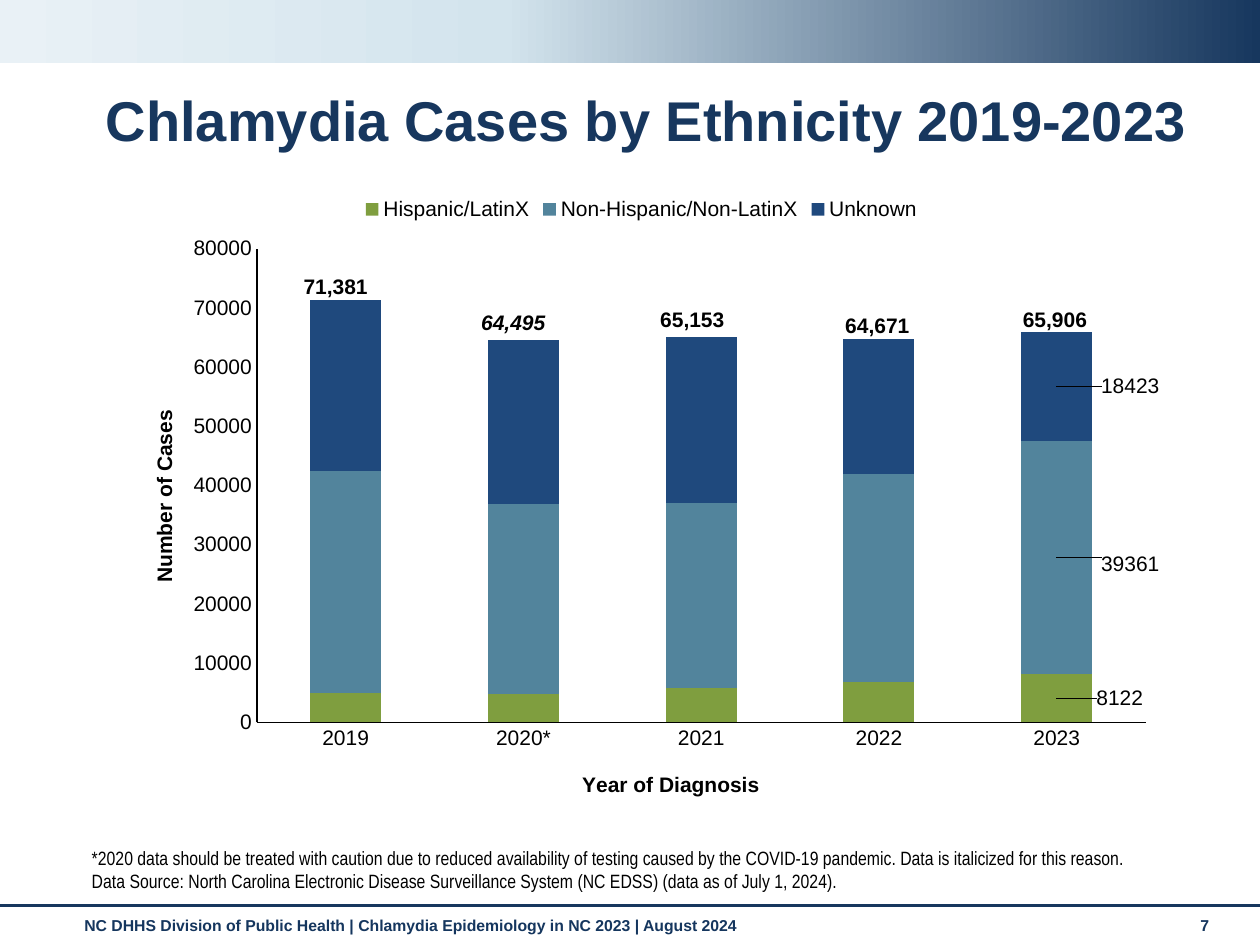
from copy import deepcopy
from typing import NamedTuple

from lxml.etree import SubElement
from pptx import Presentation
from pptx.chart.data import CategoryChartData
from pptx.dml.color import RGBColor
from pptx.enum.chart import XL_CHART_TYPE, XL_LABEL_POSITION, XL_LEGEND_POSITION, XL_TICK_MARK
from pptx.enum.shapes import MSO_CONNECTOR, MSO_SHAPE
from pptx.enum.text import MSO_ANCHOR, PP_ALIGN
from pptx.oxml import parse_xml
from pptx.oxml.ns import nsdecls, qn
from pptx.util import Cm, Pt

NAVY = RGBColor(0x17, 0x37, 0x5E)
FOOTER_NAVY = RGBColor(0x15, 0x36, 0x5E)
SKY = RGBColor(0xD3, 0xE4, 0xED)
PALE = RGBColor(0xE9, 0xF1, 0xF6)
GREEN = RGBColor(0x7F, 0x9E, 0x3F)
TEAL = RGBColor(0x52, 0x84, 0x9C)
BLUE = RGBColor(0x1F, 0x49, 0x7D)
BLACK = RGBColor(0, 0, 0)


class Box(NamedTuple):
    """Left, top, width and height in centimetres."""
    left: float
    top: float
    width: float
    height: float

    def lengths(self):
        return [Cm(value) for value in self]


class Ethnicity(NamedTuple):
    name: str
    cases: tuple
    color: RGBColor
    label_shift: tuple  # fractions of the chart size


class Total(NamedTuple):
    left: float
    top: float
    italic: bool = False


YEARS = ("2019", "2020*", "2021", "2022", "2023")
ETHNICITIES = (
    Ethnicity("Hispanic/LatinX", (5034, 4757, 5715, 6831, 8122), GREEN, (0.06, 0)),
    Ethnicity("Non-Hispanic/Non-LatinX", (37458, 32034, 31377, 35103, 39361), TEAL, (0.07, 0.01)),
    Ethnicity("Unknown", (28889, 27704, 28061, 22737, 18423), BLUE, (0.07, 0)),
)
TOTALS = (
    Total(5.87, 5.38),
    Total(9.45, 6.12, italic=True),
    Total(13.06, 6.05),
    Total(16.79, 6.17),
    Total(20.37, 6.05),
)
NOTES = (
    "*2020 data should be treated with caution due to reduced availability of testing "
    "caused by the COVID-19 pandemic. Data is italicized for this reason.\n"
    "Data Source: North Carolina Electronic Disease Surveillance System (NC EDSS) "
    "(data as of July 1, 2024)."
)


def format_font(font, size=12, color=BLACK, bold=False, italic=False, name="Arial"):
    font.name, font.size = name, Pt(size)
    font.bold, font.italic = bold, italic
    font.color.rgb = color


def write(frame, text: str, **style):
    frame.text = text
    for paragraph in frame.paragraphs:
        for run in paragraph.runs:
            format_font(run.font, **style)


def add_text(slide, box: Box, text: str, wrap=True, anchor=MSO_ANCHOR.TOP, **style):
    frame = slide.shapes.add_textbox(*box.lengths()).text_frame
    frame.word_wrap = wrap
    frame.vertical_anchor = anchor
    write(frame, text, **style)


def add_banner(slide):
    banner = slide.shapes.add_shape(MSO_SHAPE.RECTANGLE, *Box(0, 0, 25.4, 1.27).lengths())
    banner.shadow.inherit = False
    banner.line.fill.background()
    banner.fill.gradient()
    banner.fill.gradient_angle = 180
    stop_list = banner.element.spPr.find(".//" + qn("a:gsLst"))
    stop_list.insert(1, deepcopy(stop_list[0]))
    for stop, (position, color) in zip(
        banner.fill.gradient_stops, ((0, NAVY), (0.6, SKY), (1, PALE))
    ):
        stop.position = position
        stop.color.rgb = color


def add_footer_rule(slide):
    rule = slide.shapes.add_connector(MSO_CONNECTOR.STRAIGHT, Cm(0), Cm(18.26), Cm(25.4), Cm(18.26))
    rule.line.color.rgb = NAVY
    rule.line.width = Pt(1.75)
    SubElement(rule.element.spPr, qn("a:effectLst"))


def set_layout(parent, index: int, **settings):
    """Give a chart part a manual layout, as its child at the given index."""
    for old in parent.findall(qn("c:layout")):
        parent.remove(old)
    layout = parse_xml(f"<c:layout {nsdecls('c')}><c:manualLayout/></c:layout>")
    for tag, value in settings.items():
        SubElement(layout[0], qn(f"c:{tag}")).set("val", str(value))
    parent.insert(index, layout)


def format_axis(axis, title: str, x: float, y: float, rotation: int):
    axis.has_major_gridlines = False
    axis.major_tick_mark = axis.minor_tick_mark = XL_TICK_MARK.NONE
    axis.format.line.color.rgb = BLACK
    axis.format.line.width = Pt(0.75)
    format_font(axis.tick_labels.font)
    write(axis.axis_title.text_frame, title, bold=True)
    heading = axis.axis_title.element
    heading.find(".//" + qn("a:bodyPr")).set("rot", str(rotation))
    set_layout(heading, 1, xMode="edge", yMode="edge", x=x, y=y)


def add_cases_chart(slide):
    data = CategoryChartData(number_format="########0")
    data.categories = YEARS
    for ethnicity in ETHNICITIES:
        data.add_series(ethnicity.name, ethnicity.cases)
    box = Box(2.34, 3.71, 21.18, 12.8)
    chart = slide.shapes.add_chart(XL_CHART_TYPE.COLUMN_STACKED, *box.lengths(), data).chart
    format_font(chart.font, size=10)
    chart.has_title = False
    chart.has_legend = True
    chart.legend.position = XL_LEGEND_POSITION.TOP
    chart.legend.include_in_layout = False
    format_font(chart.legend.font)

    format_axis(chart.category_axis, "Year of Diagnosis", 0.44, 0.92, 0)
    format_axis(chart.value_axis, "Number of Cases", 0.03, 0.35, -5400000)
    chart.value_axis.minimum_scale = 0
    chart.value_axis.maximum_scale = 80000
    chart.value_axis.major_unit = 10000
    set_layout(
        chart.element.find(".//" + qn("c:plotArea")), 0, layoutTarget="inner",
        xMode="edge", yMode="edge", x=0.134, y=0.102, w=0.846, h=0.746,
    )

    plot = chart.plots[0]
    plot.gap_width, plot.overlap = 150, 100
    plot.vary_by_categories = False
    for series, ethnicity in zip(plot.series, ETHNICITIES):
        series.format.fill.solid()
        series.format.fill.fore_color.rgb = ethnicity.color
        series.data_labels.show_value = False
        latest = series.points[len(YEARS) - 1].data_label
        format_font(latest.font)
        latest.position = XL_LABEL_POSITION.CENTER
    labels = chart.element.iter(qn("c:dLbl"))
    for label, ethnicity in zip(list(labels), ETHNICITIES):
        x, y = ethnicity.label_shift
        set_layout(label, 1, x=x, y=y)


def main():
    deck = Presentation()
    deck.slide_width, deck.slide_height = Cm(25.4), Cm(19.05)
    slide = deck.slides.add_slide(deck.slide_layouts[5])

    add_banner(slide)
    add_footer_rule(slide)
    footer_style = dict(size=9, color=FOOTER_NAVY, bold=True)
    add_text(
        slide, Box(1.45, 18.34, 22.2, 0.74),
        "NC DHHS Division of Public Health | Chlamydia Epidemiology in NC 2023 | August 2024",
        **footer_style,
    )
    add_text(slide, Box(23.95, 18.34, 1.12, 0.76), "7", **footer_style)

    title = slide.shapes.title
    title.left, title.top, title.width, title.height = Box(1.88, 1.73, 23.14, 1.52).lengths()
    write(title.text_frame, "Chlamydia Cases by Ethnicity 2019-2023", size=32, color=NAVY, bold=True)
    title.text_frame.vertical_anchor = MSO_ANCHOR.MIDDLE
    title.text_frame.paragraphs[0].alignment = PP_ALIGN.LEFT
    title.text_frame.paragraphs[0].line_spacing = 0.9

    add_text(
        slide, Box(1.6, 16.51, 22.2, 1.6), NOTES,
        anchor=MSO_ANCHOR.BOTTOM, size=11, name="Arial Narrow",
    )
    add_cases_chart(slide)
    yearly_cases = zip(*(ethnicity.cases for ethnicity in ETHNICITIES))
    for total, cases in zip(TOTALS, yearly_cases):
        add_text(
            slide, Box(total.left, total.top, 1.83, 0.76), f"{sum(cases):,}",
            wrap=False, bold=True, italic=total.italic,
        )
    deck.save("out.pptx")


if __name__ == "__main__":
    main()
